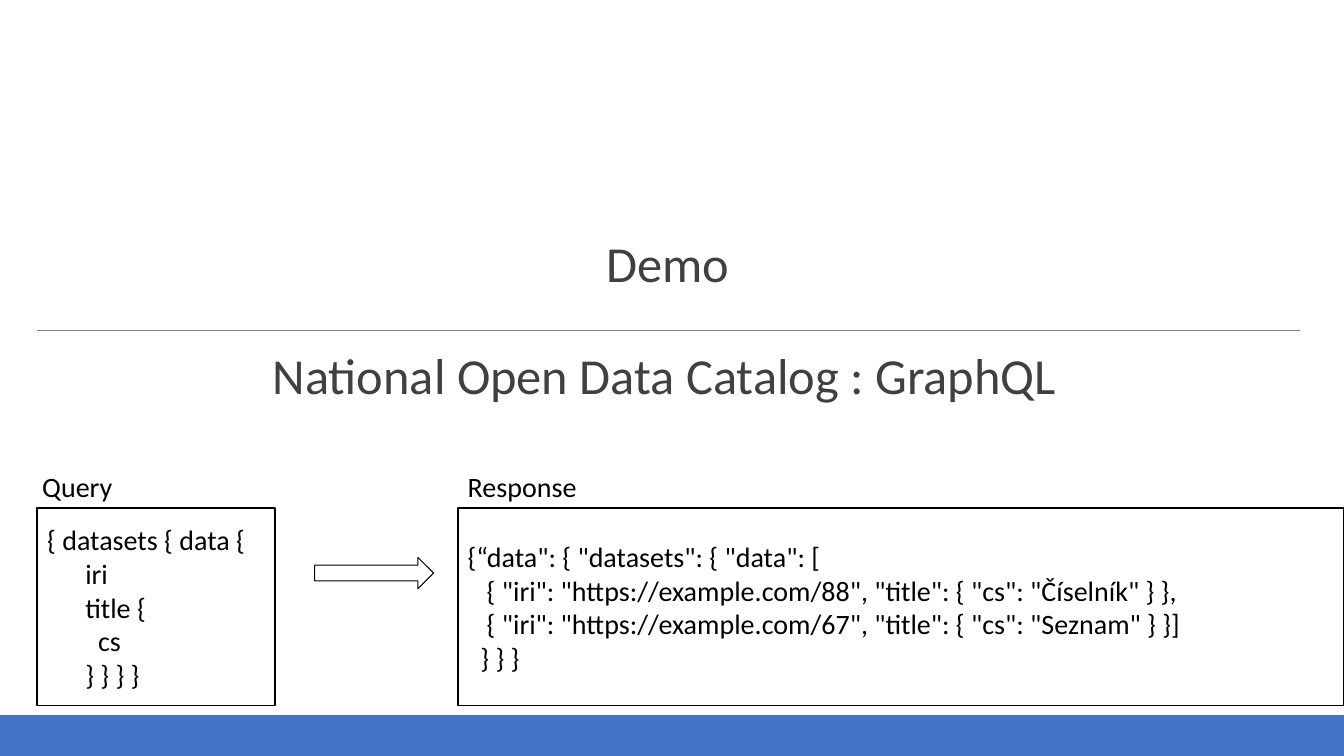
from pptx import Presentation
from pptx.dml.color import RGBColor
from pptx.enum.shapes import MSO_CONNECTOR, MSO_SHAPE
from pptx.enum.text import MSO_ANCHOR, PP_ALIGN
from pptx.oxml.ns import qn
from pptx.util import Inches, Pt
from lxml.etree import SubElement

HUES = {"blue": "4472C4", "gray": "808080", "dark": "404040", "black": "000000"}
SPACE = 0.063


class Deck:
    font = "Calibri"

    def __init__(self, show):
        self.slide = show.slides.add_slide(show.slide_layouts[6])

    def hue(self, name):
        return RGBColor.from_string(HUES[name])

    def stroke(self, line, hue, width):
        line.color.rgb = self.hue(hue)
        line.width = Pt(width)

    def put(self, par, words, size, hue):
        run = par.add_run()
        run.text = words
        run.font.name = self.font
        run.font.size = Pt(size)
        run.font.color.rgb = self.hue(hue)

    def shape(self, kind, area, hue="black", width=1.25, fill=None):
        item = self.slide.shapes.add_shape(kind, *map(Inches, area))
        item.shadow.inherit = False
        if fill:
            item.fill.solid()
            item.fill.fore_color.rgb = self.hue(fill)
        else:
            item.fill.background()
        self.stroke(item.line, hue, width)
        return item

    def rule(self, left, right, top):
        line = self.slide.shapes.add_connector(
            MSO_CONNECTOR.STRAIGHT, *map(Inches, (left, top, right, top)))
        self.stroke(line.line, "gray", 0.5)
        SubElement(line._element.spPr, qn("a:effectLst"))

    def text(self, area):
        frame = self.slide.shapes.add_textbox(*map(Inches, area)).text_frame
        frame.word_wrap = True
        return frame

    def title(self, words, area, anchor):
        frame = self.text(area)
        frame.vertical_anchor = anchor
        frame.margin_left = frame.margin_right = 0
        frame.margin_top = frame.margin_bottom = Inches(0.04)
        par = frame.paragraphs[0]
        par.alignment = PP_ALIGN.CENTER
        par.line_spacing = 0.9
        par.space_before = Pt(12)
        par.space_after = Pt(2)
        self.put(par, words, 36, "dark")

    def label(self, words, area):
        self.put(self.text(area).paragraphs[0], words, 20, "black")

    def code(self, lines, area):
        frame = self.shape(MSO_SHAPE.RECTANGLE, area).text_frame
        frame.word_wrap = True
        frame.vertical_anchor = MSO_ANCHOR.MIDDLE
        for row, (depth, words) in enumerate(lines):
            par = frame.add_paragraph() if row else frame.paragraphs[0]
            par.alignment = PP_ALIGN.LEFT
            props = par._p.get_or_add_pPr()
            props.set("marL", str(Inches(depth * SPACE)))
            props.set("indent", "0")
            self.put(par, words, 20, "black")


def main():
    show = Presentation()
    show.slide_width, show.slide_height = Inches(13.33), Inches(7.5)
    deck = Deck(show)

    deck.shape(MSO_SHAPE.RECTANGLE, (0, 7.1, 13.33, 0.4), "blue", fill="blue")
    deck.rule(0.37, 12.89, 3.28)
    deck.title("Demo", (2.49, 2.17, 8.27, 0.94), MSO_ANCHOR.MIDDLE)
    deck.title("National Open Data Catalog : GraphQL",
               (1.55, 3.44, 10.08, 2.05), MSO_ANCHOR.TOP)

    query = [(0, "{ datasets { data {"), (6, "iri"), (6, "title {"),
             (8, "cs"), (6, "} } } }")]
    reply = [(0, '{“data": { "datasets": { "data": ['),
             (3, '{ "iri": "https://example.com/88", "title": { "cs": "Číselník" } },'),
             (3, '{ "iri": "https://example.com/67", "title": { "cs": "Seznam" } }]'),
             (2, "} } }")]
    deck.code(query, (0.37, 5.04, 2.36, 1.96))
    deck.label("Query", (0.32, 4.61, 1.21, 0.44))
    deck.shape(MSO_SHAPE.RIGHT_ARROW, (3.12, 5.53, 1.18, 0.31), width=0.75)
    deck.code(reply, (4.54, 5.04, 8.79, 1.96))
    deck.label("Response", (4.54, 4.61, 1.57, 0.44))

    show.save("out.pptx")


if __name__ == "__main__":
    main()
